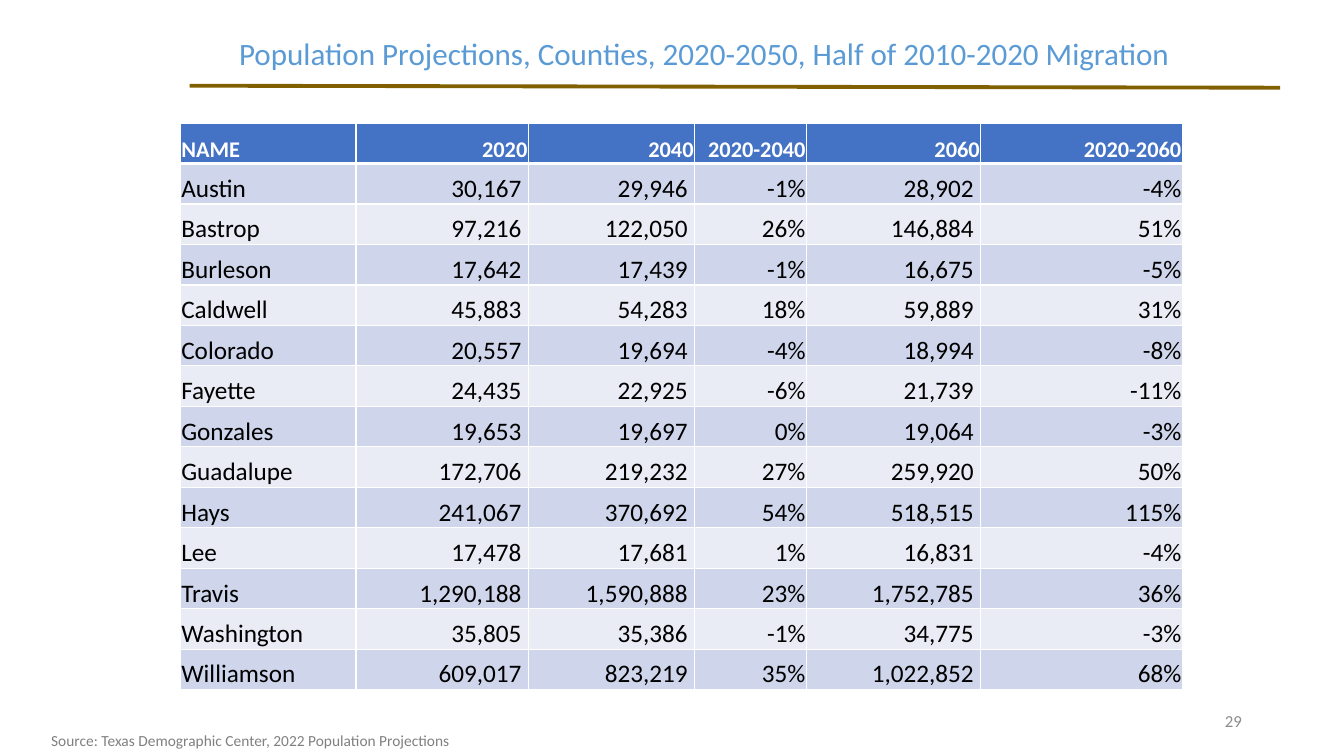
from lxml import etree
from pptx import Presentation
from pptx.dml.color import RGBColor
from pptx.enum.shapes import MSO_CONNECTOR
from pptx.enum.text import MSO_ANCHOR, MSO_AUTO_SIZE, PP_ALIGN
from pptx.oxml.ns import qn
from pptx.util import Cm, Pt

LEFT, RIGHT = PP_ALIGN.LEFT, PP_ALIGN.RIGHT
MIDDLE, BOTTOM, TOP = MSO_ANCHOR.MIDDLE, MSO_ANCHOR.BOTTOM, MSO_ANCHOR.TOP
NO_AUTOFIT = MSO_AUTO_SIZE.NONE
STRAIGHT = MSO_CONNECTOR.STRAIGHT
FONT = "Calibri"
COLOURS = {
    "title": "5B9BD5",
    "rule": "806000",
    "header": "4472C4",
    "odd": "CFD5EA",
    "even": "E9EBF5",
    "white": "FFFFFF",
    "black": "000000",
    "page": "8C8C8C",
    "source": "808080",
}
HEADINGS = ("NAME", "2020", "2040", "2020-2040", "2060", "2020-2060")
COUNTIES = (
    ("Austin", "30,167", "29,946", "-1%", "28,902", "-4%"),
    ("Bastrop", "97,216", "122,050", "26%", "146,884", "51%"),
    ("Burleson", "17,642", "17,439", "-1%", "16,675", "-5%"),
    ("Caldwell", "45,883", "54,283", "18%", "59,889", "31%"),
    ("Colorado", "20,557", "19,694", "-4%", "18,994", "-8%"),
    ("Fayette", "24,435", "22,925", "-6%", "21,739", "-11%"),
    ("Gonzales", "19,653", "19,697", "0%", "19,064", "-3%"),
    ("Guadalupe", "172,706", "219,232", "27%", "259,920", "50%"),
    ("Hays", "241,067", "370,692", "54%", "518,515", "115%"),
    ("Lee", "17,478", "17,681", "1%", "16,831", "-4%"),
    ("Travis", "1,290,188", "1,590,888", "23%", "1,752,785", "36%"),
    ("Washington", "35,805", "35,386", "-1%", "34,775", "-3%"),
    ("Williamson", "609,017", "823,219", "35%", "1,022,852", "68%"),
)
COLUMN_WIDTHS = (4.42, 4.34, 4.19, 2.82, 4.39, 5.08)
POPULATION_COLUMNS = (1, 2, 4)
ROW_HEIGHT = 1.02


def colour(name):
    return RGBColor.from_string(COLOURS[name])


def write(frame, text, size, ink, align=LEFT, bold=False):
    frame.text = text
    paragraph = frame.paragraphs[0]
    paragraph.alignment = align
    paragraph.font.name = FONT
    paragraph.font.size = Pt(size)
    paragraph.font.bold = bold
    paragraph.font.color.rgb = colour(ink)
    return paragraph


def add_title(slide, text):
    title = slide.shapes.title
    title.left, title.top, title.width, title.height = Cm(5.77), Cm(0.66), Cm(24.99), Cm(1.47)
    frame = title.text_frame
    frame.auto_size = NO_AUTOFIT
    frame.vertical_anchor = MIDDLE
    write(frame, text, 22.2, "title").line_spacing = 0.9


def add_title_rule(slide):
    rule = slide.shapes.add_connector(STRAIGHT, Cm(4.78), Cm(2.16), Cm(32.26), Cm(2.21))
    rule.line.color.rgb = colour("rule")
    rule.line.width = Pt(2.75)
    etree.SubElement(rule._element.spPr, qn("a:effectLst"))


def add_note(slide, box, text, size, ink, align=LEFT, anchor=TOP, wrap=True):
    note = slide.shapes.add_textbox(*(Cm(length) for length in box))
    note.text_frame.word_wrap = wrap
    note.text_frame.vertical_anchor = anchor
    write(note.text_frame, text, size, ink, align)


def add_borders(cell, top, bottom):
    properties = cell._tc.get_or_add_tcPr()
    for side, points in (("L", 1), ("R", 1), ("T", top), ("B", bottom)):
        border = etree.SubElement(properties, qn(f"a:ln{side}"), w=str(Pt(points)))
        fill = etree.SubElement(border, qn("a:solidFill"))
        etree.SubElement(fill, qn("a:srgbClr"), val=COLOURS["white"])


def format_cell(cell, text, row, column):
    header = row == 0
    add_borders(cell, top=3 if row == 1 else 1, bottom=3 if header else 1)
    cell.fill.solid()
    cell.fill.fore_color.rgb = colour("header" if header else "odd" if row % 2 else "even")
    cell.vertical_anchor = BOTTOM
    cell.margin_left = cell.margin_top = Cm(0.02)
    cell.margin_bottom = Cm(0)
    indented = column in POPULATION_COLUMNS and not header
    cell.margin_right = Cm(0.17 if indented else 0.02)
    write(cell.text_frame, text, 16 if header else 18, "white" if header else "black",
          RIGHT if column else LEFT, header)


def add_projection_table(slide):
    rows = (HEADINGS, *COUNTIES)
    table = slide.shapes.add_table(
        len(rows), len(HEADINGS), Cm(4.55), Cm(3.1),
        Cm(sum(COLUMN_WIDTHS)), Cm(ROW_HEIGHT * len(rows))).table
    for column, width in zip(table.columns, COLUMN_WIDTHS):
        column.width = Cm(width)
    for row, texts in enumerate(rows):
        table.rows[row].height = Cm(ROW_HEIGHT)
        for column, text in enumerate(texts):
            format_cell(table.cell(row, column), text, row, column)


def main():
    """Build the county population projection slide."""
    presentation = Presentation()
    presentation.slide_width, presentation.slide_height = Cm(33.87), Cm(19.05)
    slide = presentation.slides.add_slide(presentation.slide_layouts[5])
    add_title_rule(slide)
    add_title(slide, "Population Projections, Counties, 2020-2050, Half of 2010-2020 Migration")
    add_note(slide, (23.93, 17.65, 7.62, 1.02), "29", 12, "page", RIGHT, MIDDLE)
    add_note(slide, (1.04, 18.31, 10.72, 0.74),
             "Source: Texas Demographic Center, 2022 Population Projections",
             11, "source", wrap=False)
    add_projection_table(slide)
    presentation.save("out.pptx")


if __name__ == "__main__":
    main()
